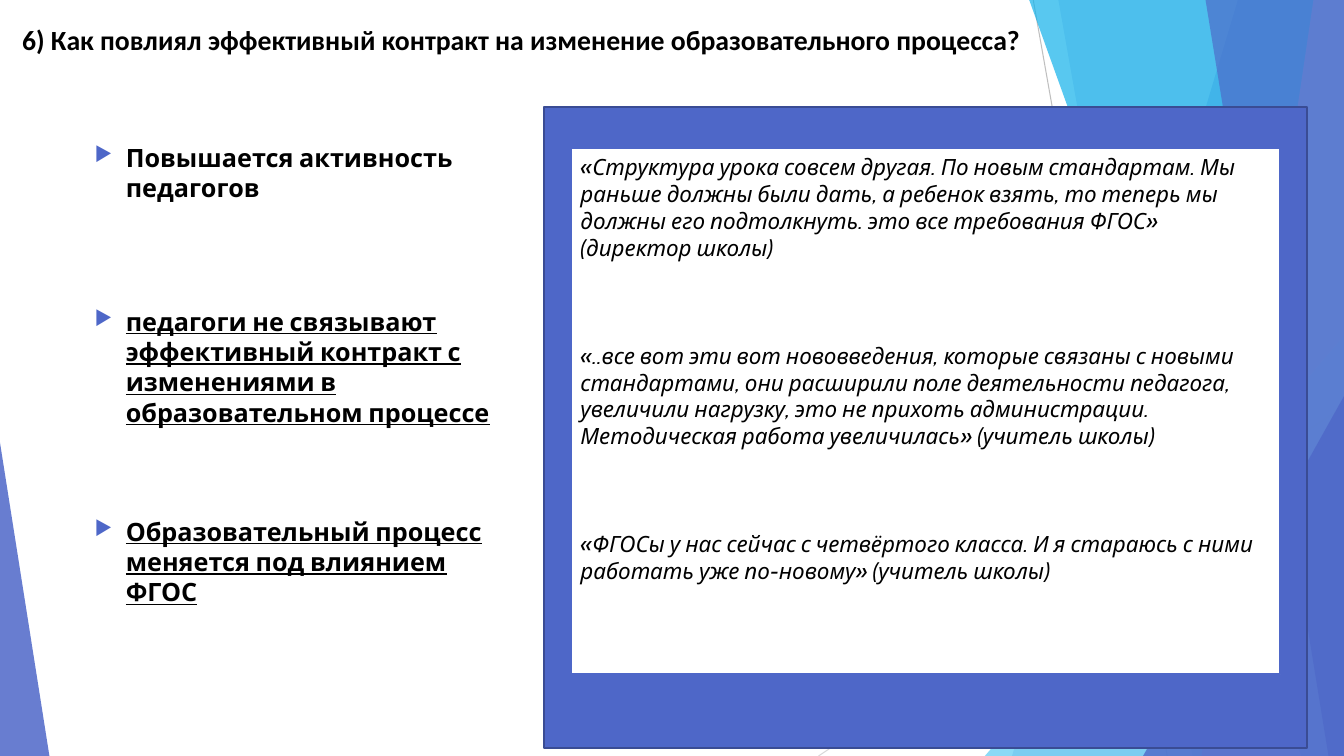
from lxml import etree
from pptx import Presentation
from pptx.dml.color import RGBColor
from pptx.enum.shapes import MSO_CONNECTOR, MSO_SHAPE
from pptx.enum.text import MSO_ANCHOR, PP_ALIGN
from pptx.oxml.ns import qn
from pptx.util import Inches, Pt

STRAIGHT = MSO_CONNECTOR.STRAIGHT
TRIANGLE = MSO_SHAPE.ISOSCELES_TRIANGLE
RECTANGLE = MSO_SHAPE.RECTANGLE
TOP = MSO_ANCHOR.TOP
LEFT = PP_ALIGN.LEFT

WIDTH, HEIGHT = Inches(13.333), Inches(7.5)
COLUMN, ROW = WIDTH / 100, HEIGHT / 100

WHITE = RGBColor(0xFF, 0xFF, 0xFF)
BLACK = RGBColor(0x00, 0x00, 0x00)
BLUE = RGBColor(0x4E, 0x67, 0xC8)
NAVY = RGBColor(0x3A, 0x4C, 0x94)
SKY = RGBColor(0x5E, 0xCC, 0xF3)
CYAN = RGBColor(0x12, 0xB2, 0xEB)
LAVENDER = RGBColor(0x95, 0xA4, 0xDE)
GREY = RGBColor(0xBF, 0xBF, 0xBF)
PALE_GREY = RGBColor(0xD9, 0xD9, 0xD9)

TITLE = "6) Как повлиял эффективный контракт на изменение образовательного процесса?"
FINDINGS = [
    ("Повышается активность педагогов", False, 0),
    ("педагоги не связывают эффективный контракт с изменениями в образовательном процессе", True, 74),
    ("Образовательный процесс меняется под влиянием ФГОС", True, 63.5),
]
QUOTES = [
    "«Структура урока совсем другая. По новым стандартам. Мы раньше должны были дать, "
    "а ребенок взять, то теперь мы должны его подтолкнуть. это все требования ФГОС» (директор школы)",
    "«..все вот эти вот нововведения, которые связаны с новыми стандартами, они расширили "
    "поле деятельности педагога, увеличили нагрузку, это не прихоть администрации. "
    "Методическая работа увеличилась» (учитель школы)",
    "«ФГОСы у нас сейчас с четвёртого класса. И я стараюсь с ними работать уже по-новому» (учитель школы)",
]
QUOTE_GAP = 58


def place(column, row):
    return round(column * COLUMN), round(row * ROW)


def paint(shape, color, opacity=100):
    shape.shadow.inherit = False
    shape.line.fill.background()
    shape.fill.solid()
    shape.fill.fore_color.rgb = color
    if opacity < 100:
        tint = shape.fill._xPr.find(".//" + qn("a:srgbClr"))
        etree.SubElement(tint, qn("a:alpha"), val=str(opacity * 1000))


def add_ray(page, start, end, color):
    ray = page.shapes.add_connector(STRAIGHT, *place(*start), *place(*end))
    ray.line.color.rgb = color
    ray.line.width = Pt(0.75)
    etree.SubElement(ray._element.spPr, qn("a:effectLst"))


def add_facet(page, top_column, bottom_column, color, opacity):
    builder = page.shapes.build_freeform(*place(top_column, 0), scale=1.0)
    corners = [(100, 0), (100, 100), (bottom_column, 100)]
    builder.add_line_segments([place(*corner) for corner in corners], close=True)
    paint(builder.convert_to_shape(), color, opacity)


def add_corner(page, column, row, columns, apex, color, opacity):
    corner = page.shapes.add_shape(TRIANGLE, *place(column, row), *place(columns, 100 - row))
    corner.adjustments[0] = apex
    paint(corner, color, opacity)


def add_panel(page, column, row, columns, rows, fill, line):
    panel = page.shapes.add_shape(RECTANGLE, *place(column, row), *place(columns, rows))
    paint(panel, fill)
    panel.line.color.rgb = line
    panel.line.width = Pt(1.5)
    return panel


def add_text_area(page, column, row, columns, rows):
    return page.shapes.add_textbox(*place(column, row), *place(columns, rows))


def add_bullet(para):
    properties = para._p.get_or_add_pPr()
    properties.set("marL", str(Inches(0.81)))
    properties.set("indent", str(Inches(-0.31)))
    color = etree.SubElement(properties, qn("a:buClr"))
    etree.SubElement(color, qn("a:srgbClr"), val=str(BLUE))
    etree.SubElement(properties, qn("a:buSzPct"), val="80000")
    etree.SubElement(properties, qn("a:buChar"), char="▶")


def write(box, texts, size, name, gaps, bulleted=False):
    frame = box.text_frame
    frame.word_wrap = True
    frame.vertical_anchor = TOP
    frame.text = "\n".join(texts)
    for para, gap in zip(frame.paragraphs, gaps):
        para.alignment = LEFT
        para.space_before = Pt(gap)
        if bulleted:
            add_bullet(para)
        for span in para.runs:
            span.font.size = Pt(size)
            span.font.name = name
            span.font.color.rgb = BLACK
    return frame.paragraphs


def add_backdrop(page):
    add_ray(page, (76.88, 0), (86.85, 100), GREY)
    add_ray(page, (100, 53.73), (60.9, 100), PALE_GREY)
    add_facet(page, 92.1, 75.3, BLUE, 30)
    add_facet(page, 78.75, 88.73, BLUE, 20)
    add_corner(page, 73.28, 44.4, 26.72, 1, SKY, 72)
    add_facet(page, 76.58, 96.83, CYAN, 70)
    add_facet(page, 97.73, 89.4, LAVENDER, 70)
    add_facet(page, 89.7, 98.85, BLUE, 65)
    add_corner(page, 85.05, 52.4, 14.95, 1, BLUE, 80)
    add_corner(page, 0, 58.53, 3.68, 0, BLUE, 85)


def add_title(page):
    box = add_text_area(page, 0.9, 2.4, 96.53, 11.73)
    for para in write(box, [TITLE], 19.8, "Calibri", [0]):
        para.runs[0].font.bold = True


def add_quotes(page):
    add_panel(page, 40.5, 14.13, 56.78, 84.8, BLUE, NAVY)
    card = add_panel(page, 42.45, 19.6, 52.8, 69.6, WHITE, BLUE)
    for para in write(card, QUOTES, 16, "Cabin", [0, QUOTE_GAP, QUOTE_GAP]):
        para.runs[0].font.italic = True


def add_findings(page):
    box = add_text_area(page, 2.55, 18.13, 35.48, 70.13)
    texts, underlines, gaps = zip(*FINDINGS)
    for para, underline in zip(write(box, texts, 18, "Cabin", gaps, bulleted=True), underlines):
        para.runs[0].font.bold = True
        para.runs[0].font.underline = underline


def main():
    deck = Presentation()
    deck.slide_width, deck.slide_height = WIDTH, HEIGHT
    page = deck.slides.add_slide(deck.slide_layouts[6])
    add_backdrop(page)
    add_title(page)
    add_quotes(page)
    add_findings(page)
    deck.save("out.pptx")


if __name__ == "__main__":
    main()
